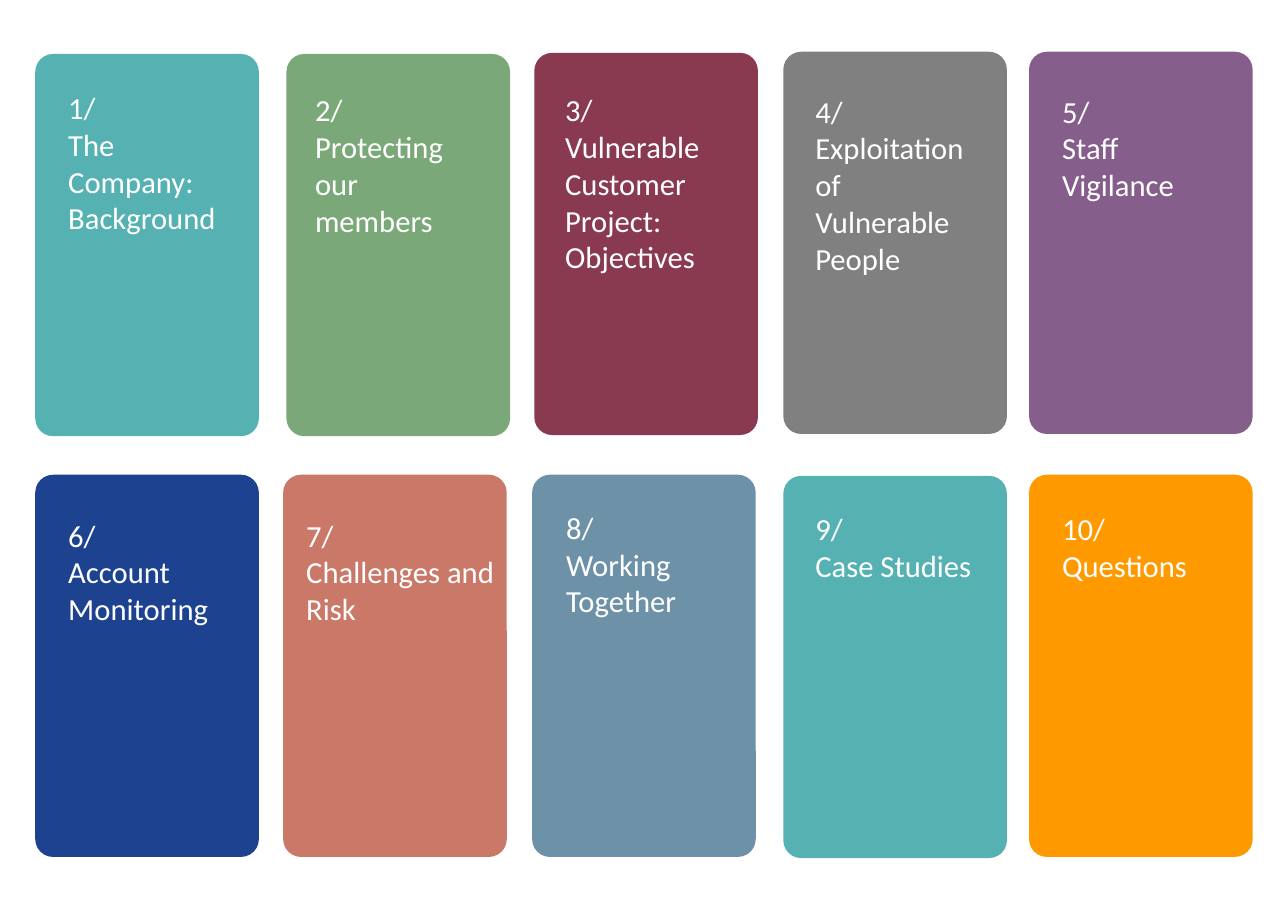
from pptx import Presentation
from pptx.dml.color import RGBColor
from pptx.enum.shapes import MSO_SHAPE
from pptx.enum.text import MSO_ANCHOR, MSO_AUTO_SIZE, PP_ALIGN
from pptx.util import Inches, Pt

COLORS = {
    "teal": "56B1B2", "green": "7BA878", "wine": "893A51", "grey": "808080",
    "purple": "865E8B", "navy": "1D428F", "coral": "CA7868", "steel": "6D92A7",
    "orange": "FF9900", "white": "FFFFFF",
}
CARD_W, CARD_H = 2.03, 3.47

AGENDA = [
    ("The Company: Background", "teal", (0.32, 0.49), (0.51, 0.75, 1.66, 1.46)),
    ("Protecting our members", "green", (2.6, 0.49), (2.75, 0.77, 1.66, 1.46)),
    ("Vulnerable Customer Project: Objectives", "wine", (4.85, 0.48), (5.02, 0.77, 1.66, 1.8)),
    ("Exploitation of Vulnerable People", "grey", (7.11, 0.47), (7.29, 0.78, 1.66, 1.8)),
    ("Staff Vigilance", "purple", (9.34, 0.47), (9.53, 0.78, 1.66, 1.46)),
    ("Account Monitoring", "navy", (0.32, 4.31), (0.51, 4.63, 1.66, 1.46)),
    ("Challenges and Risk", "coral", (2.57, 4.31), (2.67, 4.63, 1.93, 1.46)),
    ("Working Together", "steel", (4.83, 4.31), (5.03, 4.56, 1.83, 1.46)),
    ("Case Studies", "teal", (7.11, 4.32), (7.29, 4.57, 1.66, 1.12)),
    ("Questions", "orange", (9.34, 4.31), (9.53, 4.57, 1.66, 0.79)),
]


class AgendaSlide:
    font = "Calibri"
    size = Pt(20)

    def __init__(self, prs):
        self.s = prs.slides.add_slide(prs.slide_layouts[6])

    def card(self, x, y, color):
        sp = self.s.shapes.add_shape(
            MSO_SHAPE.ROUNDED_RECTANGLE,
            Inches(x), Inches(y), Inches(CARD_W), Inches(CARD_H))
        sp.adjustments[0] = 0.08
        sp.shadow.inherit = False
        sp.fill.solid()
        sp.fill.fore_color.rgb = RGBColor.from_string(COLORS[color])
        sp.line.fill.background()

    def text(self, x, y, w, h, lines):
        sp = self.s.shapes.add_textbox(Inches(x), Inches(y), Inches(w), Inches(h))
        tf = sp.text_frame
        tf.word_wrap = True
        tf.auto_size = MSO_AUTO_SIZE.SHAPE_TO_FIT_TEXT
        tf.vertical_anchor = MSO_ANCHOR.TOP
        tf.margin_left = tf.margin_right = Inches(0.11)
        tf.margin_top = tf.margin_bottom = Inches(0.06)
        tf.text = "\n".join(lines)
        for p in tf.paragraphs:
            p.alignment = PP_ALIGN.LEFT
            p.font.name = self.font
            p.font.size = self.size
            p.font.color.rgb = RGBColor.from_string(COLORS["white"])


def main():
    prs = Presentation()
    prs.slide_width, prs.slide_height = Inches(11.69), Inches(8.27)
    slide = AgendaSlide(prs)
    for number, (title, color, corner, box) in enumerate(AGENDA, 1):
        slide.card(*corner, color)
        slide.text(*box, [f"{number}/", title])
    prs.save("out.pptx")


if __name__ == "__main__":
    main()
